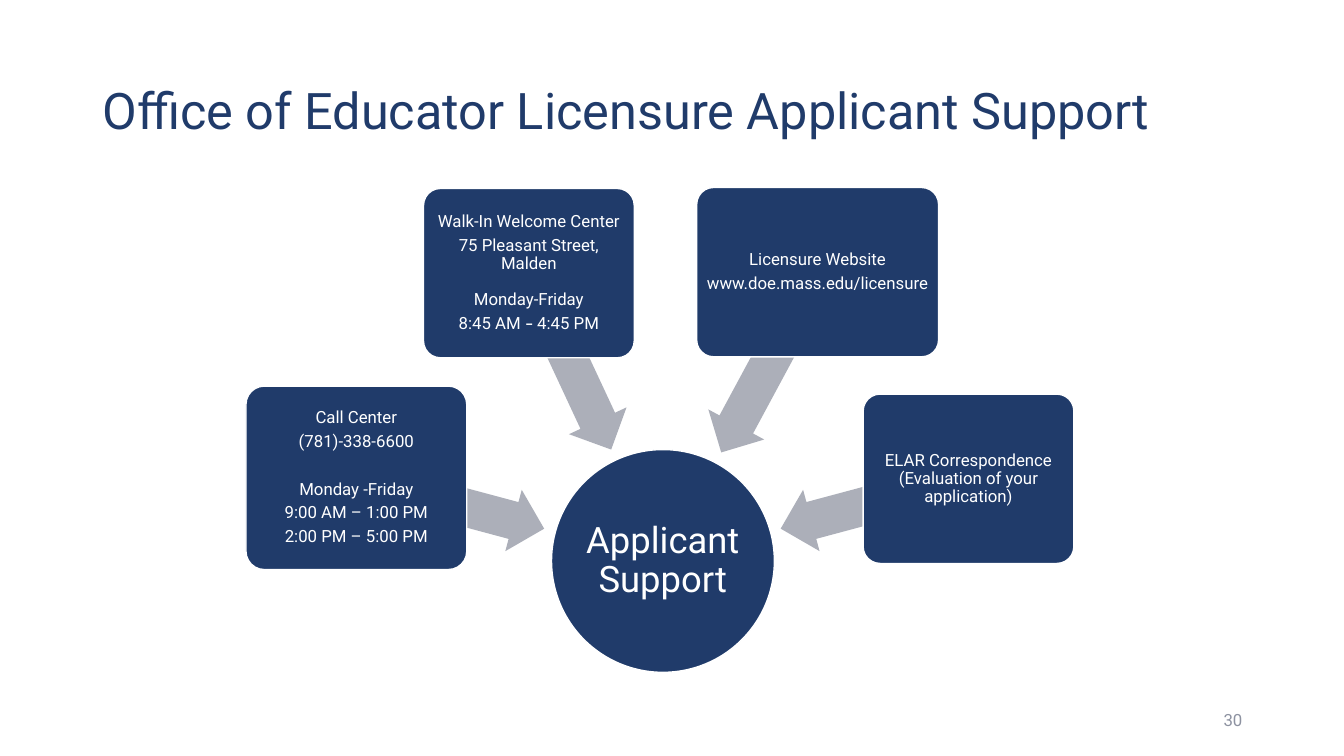
from dataclasses import dataclass

from pptx import Presentation
from pptx.dml.color import RGBColor
from pptx.enum.shapes import MSO_SHAPE
from pptx.enum.text import MSO_ANCHOR, PP_ALIGN
from pptx.shapes.autoshape import Shape
from pptx.slide import Slide
from pptx.text.text import TextFrame
from pptx.util import Inches, Pt

SLIDE_WIDTH = Inches(13.33)
SLIDE_HEIGHT = Inches(7.5)


@dataclass(frozen=True)
class Theme:
    navy: RGBColor = RGBColor(0x20, 0x3B, 0x6A)
    arrow_grey: RGBColor = RGBColor(0xAC, 0xAF, 0xB9)
    number_grey: RGBColor = RGBColor(0x8D, 0x92, 0xA1)
    white: RGBColor = RGBColor(0xFF, 0xFF, 0xFF)
    font: str = "Roboto"
    dash_font: str = "Calibri"
    title_size: float = 36
    hub_size: float = 26
    body_size: float = 12
    line_spacing: float = 0.9
    paragraph_gap: float = 4


THEME = Theme()


@dataclass(frozen=True)
class Area:
    """A rectangle in percent of the slide's width and height."""
    left: float
    top: float
    width: float
    height: float

    def lengths(self) -> tuple[int, int, int, int]:
        return (int(SLIDE_WIDTH * self.left / 100), int(SLIDE_HEIGHT * self.top / 100),
                int(SLIDE_WIDTH * self.width / 100), int(SLIDE_HEIGHT * self.height / 100))


@dataclass(frozen=True)
class Run:
    text: str
    font: str = THEME.font
    bold: bool = False


@dataclass(frozen=True)
class Line:
    runs: tuple[Run, ...]
    gap_before: float = 0


@dataclass(frozen=True)
class Channel:
    """A way to reach the office: its box and the arrow from it to the hub."""
    box: Area
    arrow: Area
    rotation: float
    lines: tuple[Line, ...]


def line(text: str, gap_before: float = 0) -> Line:
    return Line((Run(text),), gap_before)


TITLE_AREA = Area(6.9, 5.33, 86.27, 19.33)
HUB_AREA = Area(41.04, 59.47, 16.58, 29.47)
NUMBER_AREA = Area(70.67, 92.67, 22.51, 5.33)

CHANNELS = (
    Channel(Area(18.3, 51.07, 16.43, 24.27), Area(26.26, 62.4, 14.48, 8.4), 195, (
        line("Call Center"),
        line("(781)-338-6600"),
        line("Monday -Friday", gap_before=17),
        line("9:00 AM – 1:00 PM"),
        line("2:00 PM – 5:00 PM"),
    )),
    Channel(Area(31.51, 24.93, 15.68, 22.4), Area(35.18, 43.6, 14.48, 8.4), 245, (
        line("Walk-In Welcome Center"),
        line("75 Pleasant Street, Malden"),
        line("Monday-Friday", gap_before=9),
        Line((Run("8:45 AM "), Run("– ", THEME.dash_font, True), Run("4:45 PM"))),
    )),
    Channel(Area(51.84, 24.8, 18, 22.4), Area(49.66, 43.73, 15.23, 8.4), 298.3, (
        line("Licensure Website"),
        line("www.doe.mass.edu/licensure"),
    )),
    Channel(Area(64.22, 52.13, 15.68, 22.4), Area(57.84, 62.4, 14.48, 8.4), 345, (
        line("ELAR Correspondence (Evaluation of your application)"),
    )),
)


def write_lines(frame: TextFrame, lines: tuple[Line, ...], size: float, color: RGBColor,
                alignment: PP_ALIGN) -> None:
    frame.word_wrap = True
    frame.vertical_anchor = MSO_ANCHOR.MIDDLE
    for index, content in enumerate(lines):
        paragraph = frame.add_paragraph() if index else frame.paragraphs[0]
        paragraph.alignment = alignment
        paragraph.line_spacing = THEME.line_spacing
        paragraph.space_before = Pt(content.gap_before)
        is_last = index == len(lines) - 1
        paragraph.space_after = Pt(0 if is_last else THEME.paragraph_gap)
        for part in content.runs:
            run = paragraph.add_run()
            run.text = part.text
            run.font.name = part.font
            run.font.bold = part.bold
            run.font.size = Pt(size)
            run.font.color.rgb = color


def add_label(slide: Slide, area: Area, text: str, size: float, color: RGBColor,
              alignment: PP_ALIGN) -> None:
    text_box = slide.shapes.add_textbox(*area.lengths())
    write_lines(text_box.text_frame, (line(text),), size, color, alignment)


def add_plain_shape(slide: Slide, kind: MSO_SHAPE, area: Area, fill: RGBColor) -> Shape:
    shape = slide.shapes.add_shape(kind, *area.lengths())
    shape.shadow.inherit = False
    shape.fill.solid()
    shape.fill.fore_color.rgb = fill
    shape.line.fill.background()
    return shape


def add_node(slide: Slide, kind: MSO_SHAPE, area: Area, lines: tuple[Line, ...],
             size: float, inset: float) -> Shape:
    """Add a navy shape with a white outline and centred white text."""
    node = add_plain_shape(slide, kind, area, THEME.navy)
    node.line.color.rgb = THEME.white
    node.line.width = Pt(1)
    frame = node.text_frame
    frame.margin_left = frame.margin_right = Inches(inset)
    frame.margin_top = frame.margin_bottom = Inches(inset)
    write_lines(frame, lines, size, THEME.white, PP_ALIGN.CENTER)
    return node


def add_channel(slide: Slide, channel: Channel) -> None:
    arrow = add_plain_shape(slide, MSO_SHAPE.LEFT_ARROW, channel.arrow, THEME.arrow_grey)
    arrow.adjustments[0] = 0.6
    arrow.adjustments[1] = 0.5
    arrow.rotation = channel.rotation
    box = add_node(slide, MSO_SHAPE.ROUNDED_RECTANGLE, channel.box, channel.lines,
                   THEME.body_size, inset=0.03)
    box.adjustments[0] = 0.1


def main() -> None:
    presentation = Presentation()
    presentation.slide_width = SLIDE_WIDTH
    presentation.slide_height = SLIDE_HEIGHT
    slide = presentation.slides.add_slide(presentation.slide_layouts[6])

    add_label(slide, TITLE_AREA, "Office of Educator Licensure Applicant Support",
              THEME.title_size, THEME.navy, PP_ALIGN.LEFT)
    add_node(slide, MSO_SHAPE.OVAL, HUB_AREA, (line("Applicant Support"),),
             THEME.hub_size, inset=0.02)
    for channel in CHANNELS:
        add_channel(slide, channel)
    add_label(slide, NUMBER_AREA, "30", THEME.body_size, THEME.number_grey, PP_ALIGN.RIGHT)

    presentation.save("out.pptx")


if __name__ == "__main__":
    main()
